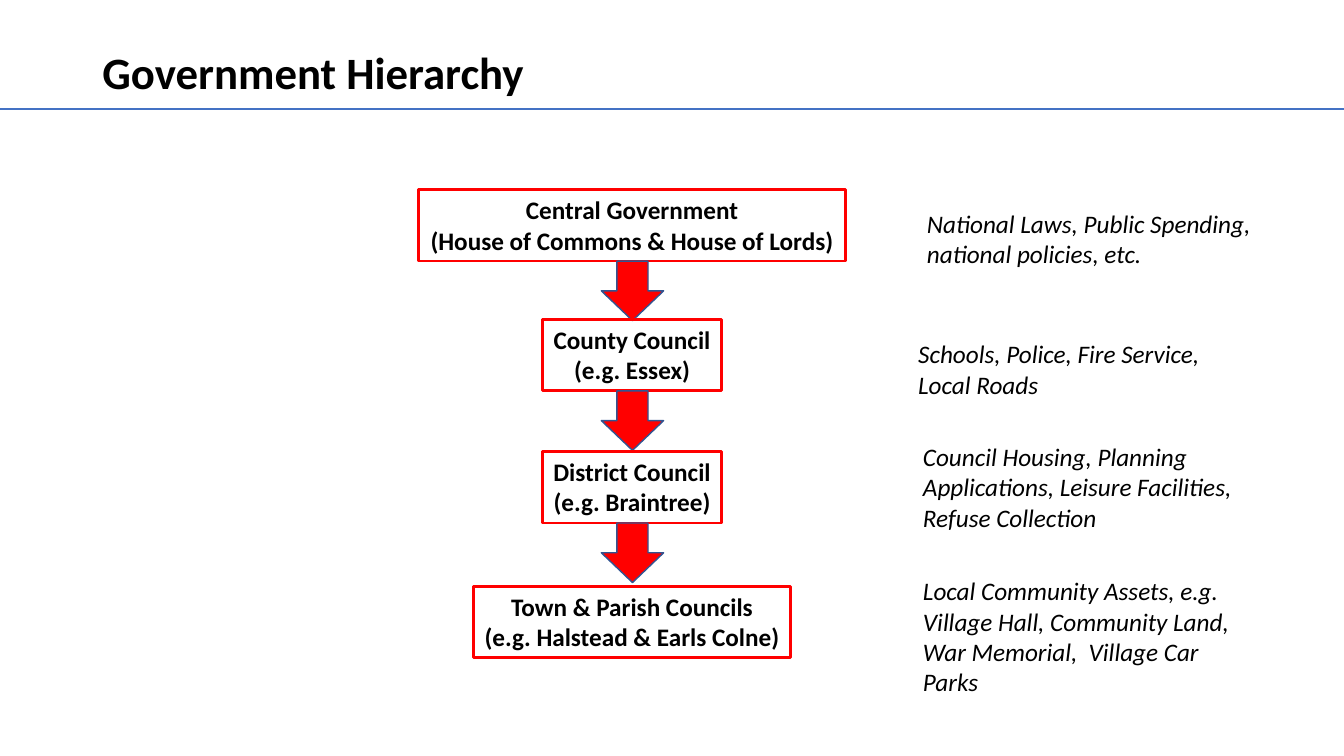
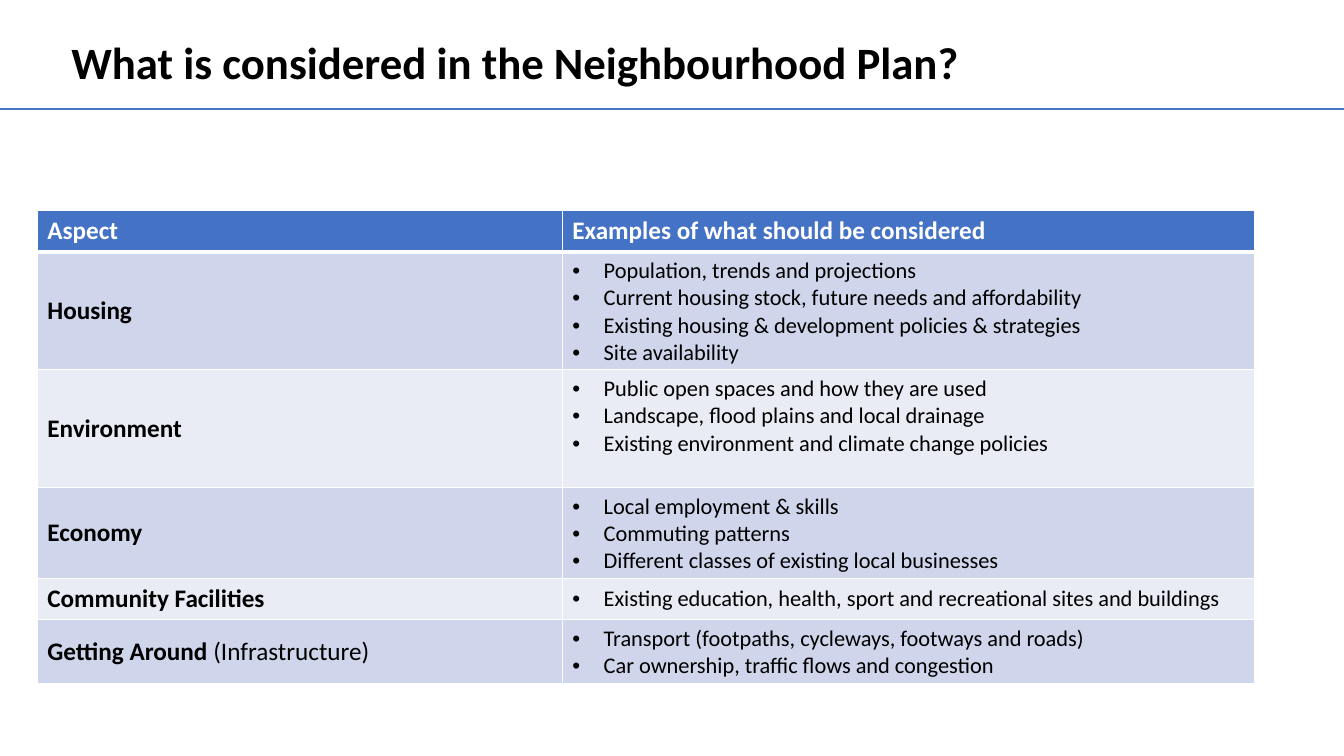
from lxml import etree
from pptx import Presentation
from pptx.dml.color import RGBColor
from pptx.enum.shapes import MSO_CONNECTOR, MSO_SHAPE
from pptx.enum.text import MSO_ANCHOR, PP_ALIGN
from pptx.oxml import parse_xml
from pptx.oxml.ns import nsdecls, qn
from pptx.util import Cm, Pt

RECT, DOWN = MSO_SHAPE.RECTANGLE, MSO_SHAPE.DOWN_ARROW
LINE = MSO_CONNECTOR.STRAIGHT
TOP, MID = MSO_ANCHOR.TOP, MSO_ANCHOR.MIDDLE
LEFT, MIDST = PP_ALIGN.LEFT, PP_ALIGN.CENTER

WIDE, HIGH = 33.87, 19.05

HEADS = [
    dict(text="Government Hierarchy", at=(2.33, 1.02, 29.2, 1.73), gap=0.9),
    dict(text="What is considered in the Neighbourhood Plan?", at=(1.55, 0.74, 30.94, 1.63), gap=1.0),
]

TIERS = [
    dict(name=["Central Government", "(House of Commons & House of Lords)"], top=4.78, wide=10.77,
         note="National Laws, Public Spending, national policies, etc.",
         at=(23.11, 5.13, 8.86, 1.8)),
    dict(name=["County Council", "(e.g. Essex)"], top=8.05, wide=4.5,
         note="Schools, Police, Fire Service, Local Roads",
         at=(22.89, 8.41, 8.74, 1.8)),
    dict(name=["District Council", "(e.g. Braintree)"], top=11.38, wide=4.52,
         note="Council Housing, Planning Applications, Leisure Facilities, Refuse Collection",
         at=(23.01, 11, 8.86, 2.57)),
    dict(name=["Town & Parish Councils", "(e.g. Halstead & Earls Colne)"], top=14.78, wide=8,
         note="Local Community Assets, e.g. Village Hall, Community Land, War Memorial,  Village Car Parks",
         at=(23.01, 14.38, 8.64, 3.33)),
]
AXIS, TALL = 15.93, 1.8
ARROW = (1.57, 1.5)

HEADER = ["Aspect", "Examples of what should be considered"]
TOPICS = [
    ("Housing", "", 2.97, MID, [
        "Population, trends and projections",
        "Current housing stock, future needs and affordability",
        "Existing housing & development policies & strategies",
        "Site availability"]),
    ("Environment", "", 2.97, TOP, [
        "Public open spaces and how they are used",
        "Landscape, flood plains and local drainage",
        "Existing environment and climate change policies"]),
    ("Economy", "", 2.27, MID, [
        "Local employment & skills",
        "Commuting patterns",
        "Different classes of existing local businesses"]),
    ("Community Facilities", "", 1.04, MID, [
        "Existing education, health, sport and recreational sites and buildings"]),
    ("Getting Around ", "(Infrastructure)", 1.62, MID, [
        "Transport (footpaths, cycleways, footways and roads)",
        "Car ownership, traffic flows and congestion"]),
]
GRID = (0.94, 5.31)
COLS = (13.23, 17.45)
HEAD_TALL = 1.04


class Theme:
    ink, white, red = "000000", "FFFFFF", "FF0000"
    blue, edge = "4472C4", "325491"
    bands = ("CFD5EA", "E9EBF5")
    face = "Calibri"
    title = dict(size=Pt(32), bold=True)
    label = dict(size=Pt(18), bold=True)
    plain = dict(size=Pt(18), bold=False)
    note = dict(size=Pt(18), italic=True)
    item = dict(size=Pt(16), bold=False)


def rgb(code):
    return RGBColor.from_string(code)


def apply(thing, form):
    for key, value in form.items():
        setattr(thing, key, value)


def add_run(para, text, form, color=Theme.ink):
    run = para.add_run()
    run.text = text
    apply(run.font, dict(form, name=Theme.face))
    run.font.color.rgb = rgb(color)


def add_lines(frame, lines, form, align=LEFT, bullet=False):
    for i, text in enumerate(lines):
        para = frame.add_paragraph() if i else frame.paragraphs[0]
        para.alignment = align
        if bullet:
            props = para._p.get_or_add_pPr()
            props.set("marL", str(Cm(0.79)))
            props.set("indent", str(-Cm(0.79)))
            etree.SubElement(props, qn("a:buFont")).set("typeface", "Arial")
            etree.SubElement(props, qn("a:buChar")).set("char", "•")
        add_run(para, text, form)


def add_text(slide, at, lines, form, anchor=TOP):
    frame = slide.shapes.add_textbox(*map(Cm, at)).text_frame
    apply(frame, dict(word_wrap=True, vertical_anchor=anchor))
    add_lines(frame, lines, form)
    return frame


def add_block(slide, kind, at, fill, edge, width):
    shape = slide.shapes.add_shape(kind, *map(Cm, at))
    shape.shadow.inherit = False
    if fill:
        shape.fill.solid()
        shape.fill.fore_color.rgb = rgb(fill)
    else:
        shape.fill.background()
    shape.line.color.rgb = rgb(edge)
    shape.line.width = Pt(width)
    return shape


def add_page(deck, head):
    slide = deck.slides.add_slide(deck.slide_layouts[6])
    rule = slide.shapes.add_connector(LINE, 0, Cm(2.75), Cm(WIDE), Cm(2.75))
    rule.line.color.rgb = rgb(Theme.blue)
    rule.line.width = Pt(1.5)
    etree.SubElement(rule._element.spPr, qn("a:effectLst"))
    frame = add_text(slide, head["at"], [head["text"]], Theme.title, MID)
    frame.paragraphs[0].line_spacing = head["gap"]
    return slide


def draw_tiers(slide):
    for i, tier in enumerate(TIERS):
        top, wide = tier["top"], tier["wide"]
        box = add_block(slide, RECT, (AXIS - wide / 2, top, wide, TALL), None, Theme.red, 2)
        apply(box.text_frame, dict(word_wrap=False, vertical_anchor=TOP))
        add_lines(box.text_frame, tier["name"], Theme.label, MIDST)
        add_text(slide, tier["at"], [tier["note"]], Theme.note)
        if i < len(TIERS) - 1:
            at = (AXIS + 0.01 - ARROW[0] / 2, top + TALL, *ARROW)
            add_block(slide, DOWN, at, Theme.red, Theme.edge, 1)


def style_cell(cell, fill, anchor, base=1, cap=1):
    props = cell._tc.get_or_add_tcPr()
    for side, width in dict(L=1, R=1, T=cap, B=base).items():
        props.append(parse_xml(
            f'<a:ln{side} {nsdecls("a")} w="{Pt(width)}"><a:solidFill>'
            f'<a:srgbClr val="{Theme.white}"/></a:solidFill></a:ln{side}>'))
    cell.fill.solid()
    cell.fill.fore_color.rgb = rgb(fill)
    cell.vertical_anchor = anchor


def draw_table(slide):
    talls = [HEAD_TALL] + [topic[2] for topic in TOPICS]
    size = (sum(COLS), sum(talls))
    table = slide.shapes.add_table(len(talls), len(COLS), *map(Cm, GRID + size)).table
    table.horz_banding = False
    for col, wide in zip(table.columns, COLS):
        col.width = Cm(wide)
    for row, tall in zip(table.rows, talls):
        row.height = Cm(tall)
    for c, text in enumerate(HEADER):
        cell = table.cell(0, c)
        style_cell(cell, Theme.blue, TOP, base=3)
        add_run(cell.text_frame.paragraphs[0], text, Theme.label, Theme.white)
    for r, (name, extra, _, anchor, items) in enumerate(TOPICS, 1):
        left, right = table.cell(r, 0), table.cell(r, 1)
        fill = Theme.bands[(r - 1) % 2]
        cap = 3 if r == 1 else 1
        style_cell(left, fill, MID, cap=cap)
        style_cell(right, fill, anchor, cap=cap)
        add_lines(left.text_frame, [name], Theme.label)
        if extra:
            add_run(left.text_frame.paragraphs[0], extra, Theme.plain)
        add_lines(right.text_frame, items, Theme.item, bullet=True)


def main():
    deck = Presentation()
    deck.slide_width, deck.slide_height = Cm(WIDE), Cm(HIGH)
    for head, draw in zip(HEADS, (draw_tiers, draw_table)):
        draw(add_page(deck, head))
    deck.save("out.pptx")


if __name__ == "__main__":
    main()
